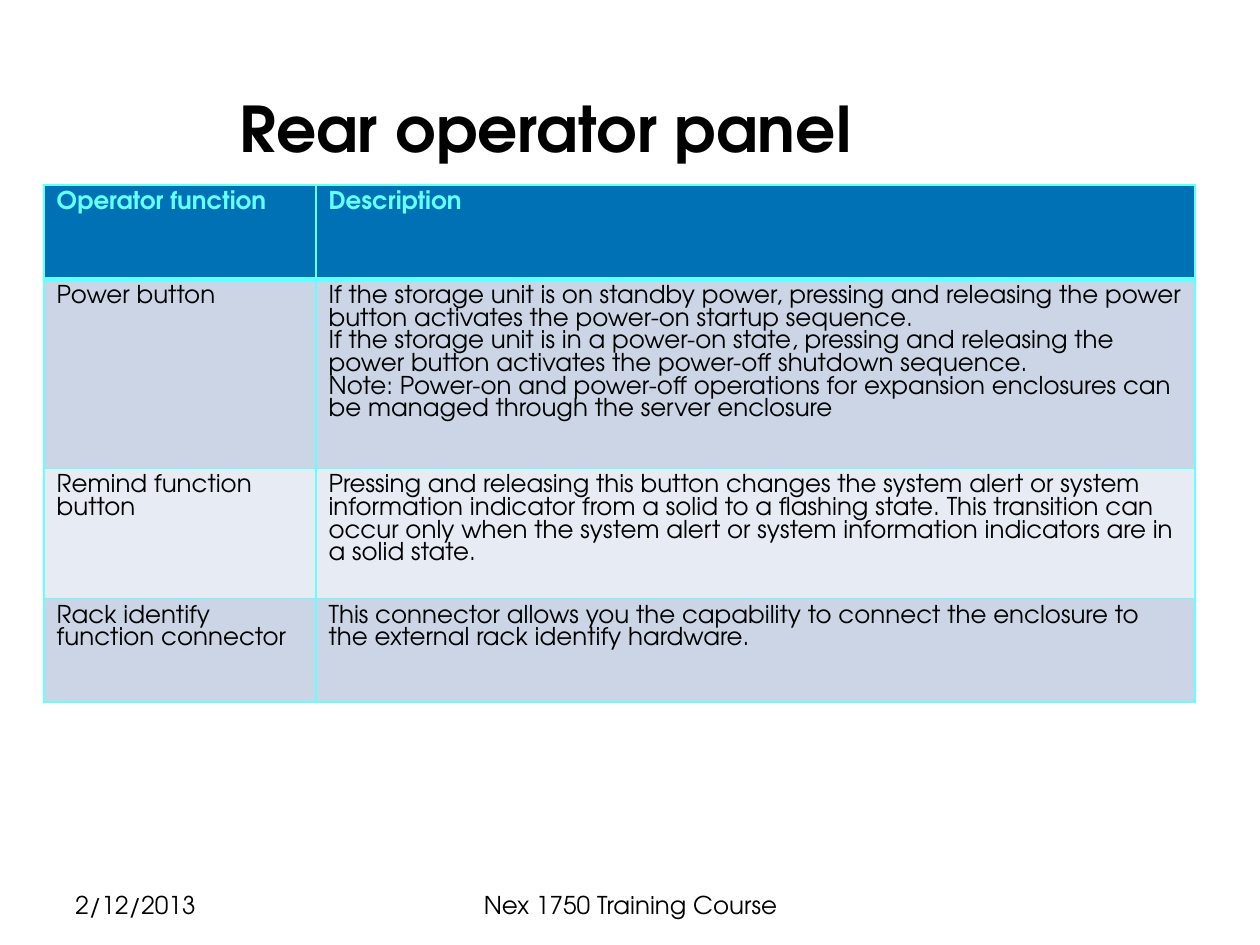
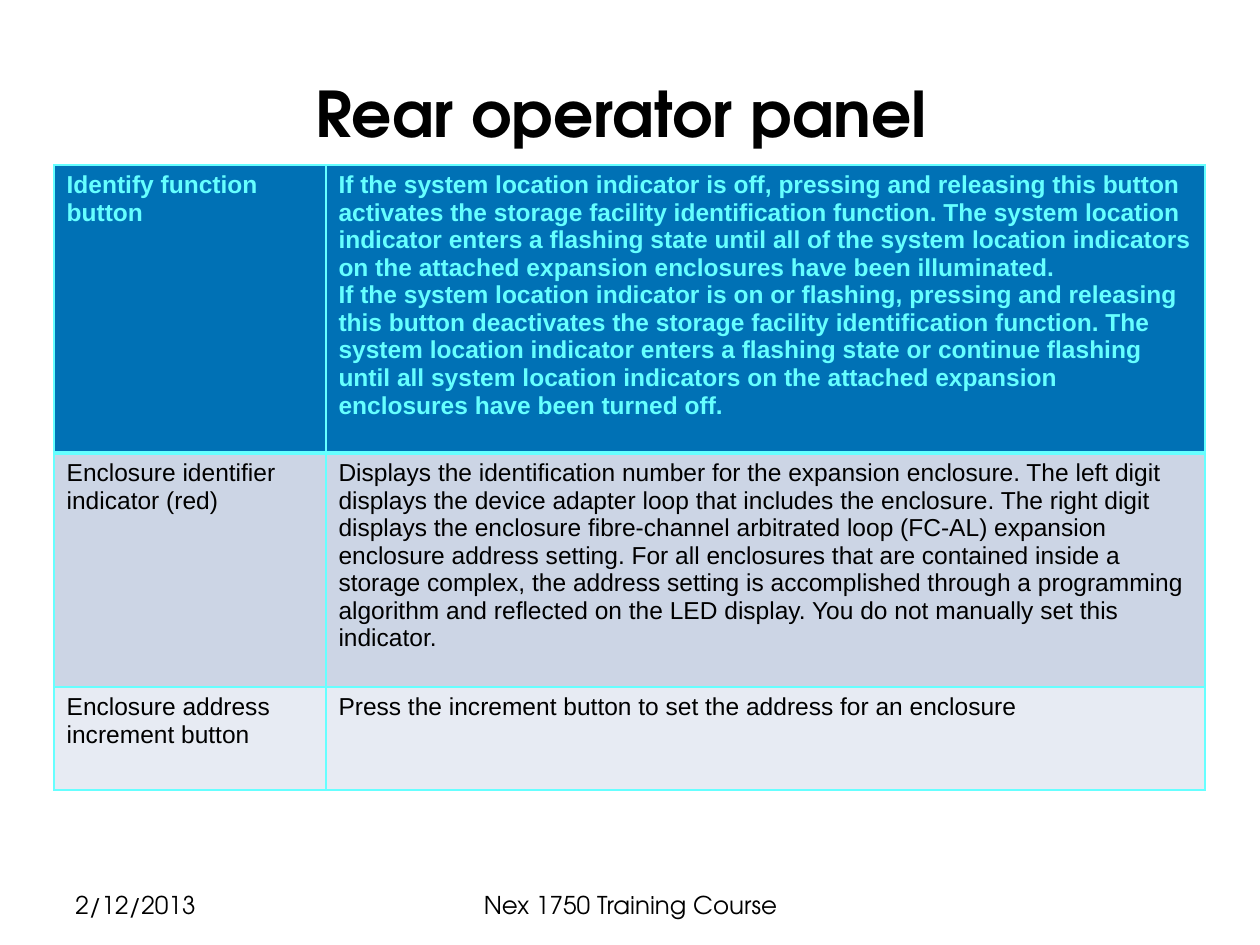
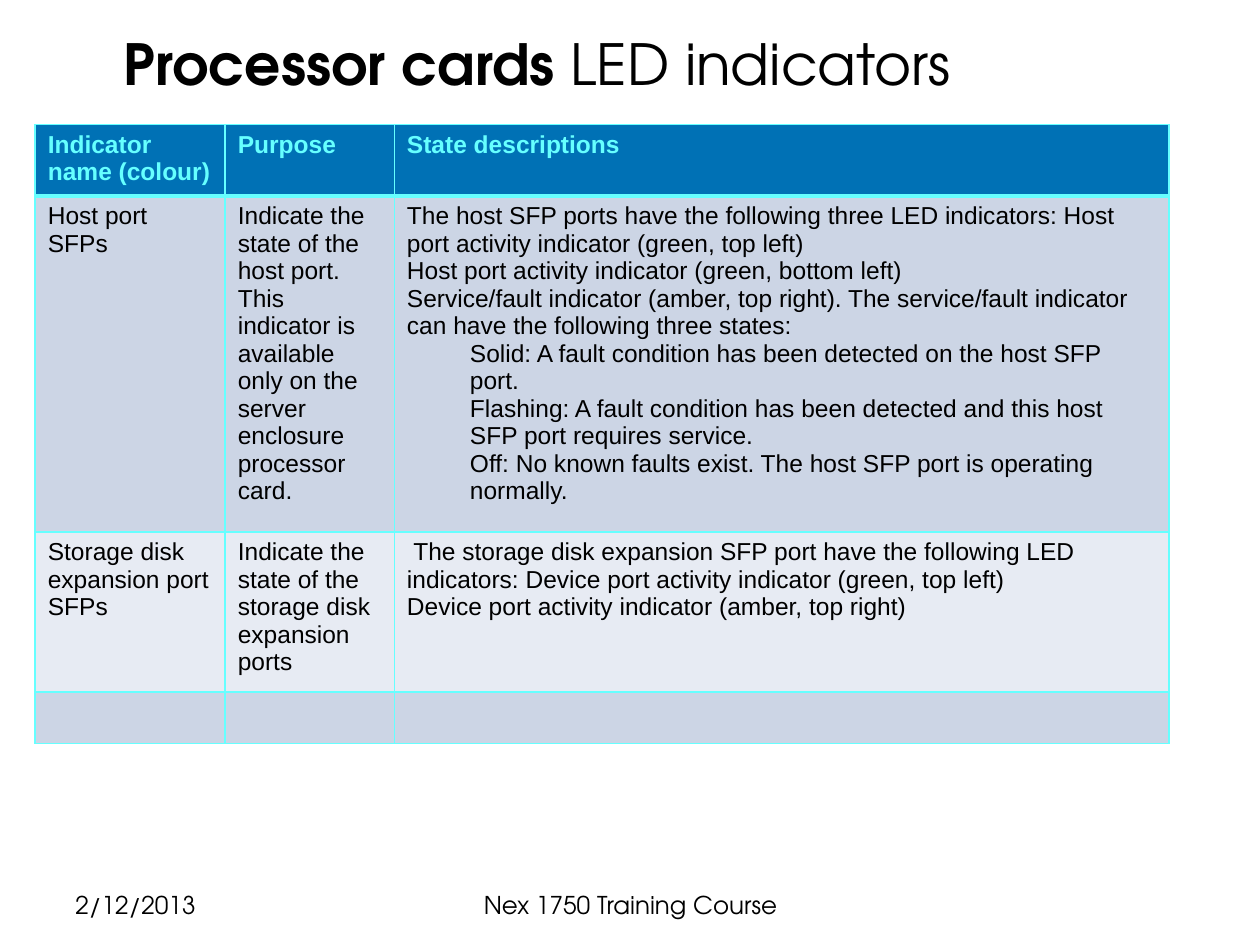
"""Build three training slides that describe panel functions and LED indicators in tables."""
import pptx
import pptx.dml.color
import pptx.enum.text
import pptx.oxml
import pptx.oxml.ns
import pptx.util

Cm, Pt = pptx.util.Cm, pptx.util.Pt
ALIGN, ANCHOR = pptx.enum.text.PP_ALIGN, pptx.enum.text.MSO_ANCHOR
COLOURS = {"text": "000000", "accent": "66FFFF", "header": "0071B5",
           "odd": "CCD5E5", "even": "E7EBF3"}
HEADING, BODY = "TeX Gyre Adventor", "Arial"


def style_font(font, colour, **values):
    for attribute, value in values.items():
        setattr(font, attribute, value)
    font.color.rgb = pptx.dml.color.RGBColor.from_string(COLOURS[colour])


def add_line(slide, box, runs, size, align, spacing):
    frame = slide.shapes.add_textbox(*map(Cm, box)).text_frame
    for attribute, value in {"word_wrap": True, "vertical_anchor": ANCHOR.BOTTOM}.items():
        setattr(frame, attribute, value)
    line = frame.paragraphs[0]
    for attribute, value in {"alignment": align, "line_spacing": spacing}.items():
        setattr(line, attribute, value)
    for text, bold in runs:
        run = line.add_run()
        run.text = text
        style_font(run.font, "text", name=HEADING, size=Pt(size), bold=bold)


pages = [
    {
        "title": [("Rear operator panel", True)], "title_size": 36,
        "title_box": (1.19, 0.3, 19.61, 3.18),
        "font": HEADING, "corner": (0.89, 3.73),
        "columns": [5.48, 17.72], "rows": [1.9, 3.47, 2.08, 2.08],
        "cells": [
            [["Operator function"], ["Description"]],
            [["Power button"], [
                "If the storage unit is on standby power, pressing and releasing the power button "
                "activates the power-on startup sequence.",
                "If the storage unit is in a power-on state, pressing and releasing the power button "
                "activates the power-off shutdown sequence.",
                "Note: Power-on and power-off operations for expansion enclosures can be managed "
                "through the server enclosure"]],
            [["Remind function button"], [
                "Pressing and releasing this button changes the system alert or system information "
                "indicator from a solid to a flashing state. This transition can occur only when the "
                "system alert or system information indicators are in a solid state."]],
            [["Rack identify function connector"], [
                "This connector allows you the capability to connect the enclosure to the external "
                "rack identify hardware."]],
        ],
    },
    {
        "title": [("Rear operator panel", True)], "title_size": 36,
        "title_box": (1.09, 0, 22.86, 3.18),
        "font": BODY, "corner": (1.09, 3.33),
        "columns": [5.48, 17.72], "rows": [5.8, 4.72, 2.08],
        "cells": [
            [["Identify function button"], [
                "If the system location indicator is off, pressing and releasing this button "
                "activates the storage facility identification function. The system location "
                "indicator enters a flashing state until all of the system location indicators on "
                "the attached expansion enclosures have been illuminated.",
                "If the system location indicator is on or flashing, pressing and releasing this "
                "button deactivates the storage facility identification function. The system "
                "location indicator enters a flashing state or continue flashing until all system "
                "location indicators on the attached expansion enclosures have been turned off."]],
            [["Enclosure identifier indicator (red)"], [
                "Displays the identification number for the expansion enclosure. The left digit "
                "displays the device adapter loop that includes the enclosure. The right digit "
                "displays the enclosure fibre-channel arbitrated loop (FC-AL) expansion enclosure "
                "address setting. For all enclosures that are contained inside a storage complex, "
                "the address setting is accomplished through a programming algorithm and reflected "
                "on the LED display. You do not manually set this indicator."]],
            [["Enclosure address increment button"], [
                "Press the increment button to set the address for an enclosure"]],
        ],
    },
    {
        "title": [("Processor cards", True), (" LED indicators", False)], "title_size": 32.4,
        "title_box": (1.03, 0.3, 19.61, 1.8),
        "font": BODY, "corner": (0.71, 2.51),
        "columns": [3.83, 3.41, 15.62], "rows": [1.4, 6.37, 3.02, 1.04],
        "cells": [
            [["Indicator name (colour)"], ["Purpose"], ["State descriptions"]],
            [["Host port SFPs"], [
                "Indicate the state of the host port. This indicator is available only on the "
                "server enclosure processor card."], [
                "The host SFP ports have the following three LED indicators: Host port activity "
                "indicator (green, top left)",
                "Host port activity indicator (green, bottom left)",
                "Service/fault indicator (amber, top right). The service/fault indicator can have "
                "the following three states:",
                (1, "Solid: A fault condition has been detected on the host SFP port."),
                (1, "Flashing: A fault condition has been detected and this host SFP port requires "
                    "service."),
                (1, "Off: No known faults exist. The host SFP port is operating normally.")]],
            [["Storage disk expansion port SFPs"], [
                "Indicate the state of the storage disk expansion ports"], [
                " The storage disk expansion SFP port have the following LED indicators: Device "
                "port activity indicator (green, top left)",
                "Device port activity indicator (amber, top right)"]],
            [[""], [""], [""]],
        ],
    },
]
footers = [("2/12/2013", (1.27, 17.86, 5.92, 0.81), ALIGN.LEFT),
           ("Nex 1750 Training Course", (8.69, 17.86, 8.05, 0.81), ALIGN.CENTER)]

deck = pptx.Presentation()
deck.slide_width, deck.slide_height = Cm(25.4), Cm(19.05)

for page in pages:
    slide = deck.slides.add_slide(deck.slide_layouts[6])
    add_line(slide, page["title_box"], page["title"], page["title_size"], ALIGN.CENTER, 0.9)

    columns, rows = page["columns"], page["rows"]
    functions = slide.shapes.add_table(
        len(rows), len(columns), *map(Cm, (*page["corner"], sum(columns), sum(rows)))).table
    for column, width in zip(functions.columns, columns):
        column.width = Cm(width)
    for row, height in zip(functions.rows, rows):
        row.height = Cm(height)

    for r, entries in enumerate(page["cells"]):
        is_header = r == 0
        band = "header" if is_header else ("even", "odd")[r % 2]
        for c, entry in enumerate(entries):
            cell = functions.cell(r, c)
            cell.fill.solid()
            cell.fill.fore_color.rgb = pptx.dml.color.RGBColor.from_string(COLOURS[band])
            edges = {"L": 1, "R": 1, "T": 3 if r == 1 else 1, "B": 3 if is_header else 1}
            for position, (side, weight) in enumerate(edges.items()):
                cell._tc.get_or_add_tcPr().insert(position, pptx.oxml.parse_xml(
                    f'<a:ln{side} {pptx.oxml.ns.nsdecls("a")} w="{Pt(weight)}"><a:solidFill>'
                    f'<a:srgbClr val="{COLOURS["accent"]}"/></a:solidFill></a:ln{side}>'))
            for i, item in enumerate(entry):
                level, text = (0, item) if isinstance(item, str) else item
                frame = cell.text_frame
                paragraph = frame.add_paragraph() if i else frame.paragraphs[0]
                paragraph.text = text
                if level:
                    paragraph.level = level
                    paragraph._p.get_or_add_pPr().set("marL", str(Cm(1.27)))
                for font in [paragraph.font] + [run.font for run in paragraph.runs]:
                    style_font(font, "accent" if is_header else "text",
                               name=page["font"], size=Pt(14), bold=is_header)

    for text, box, align in footers:
        add_line(slide, box, [(text, False)], 14, align, 1.0)

deck.save("out.pptx")
